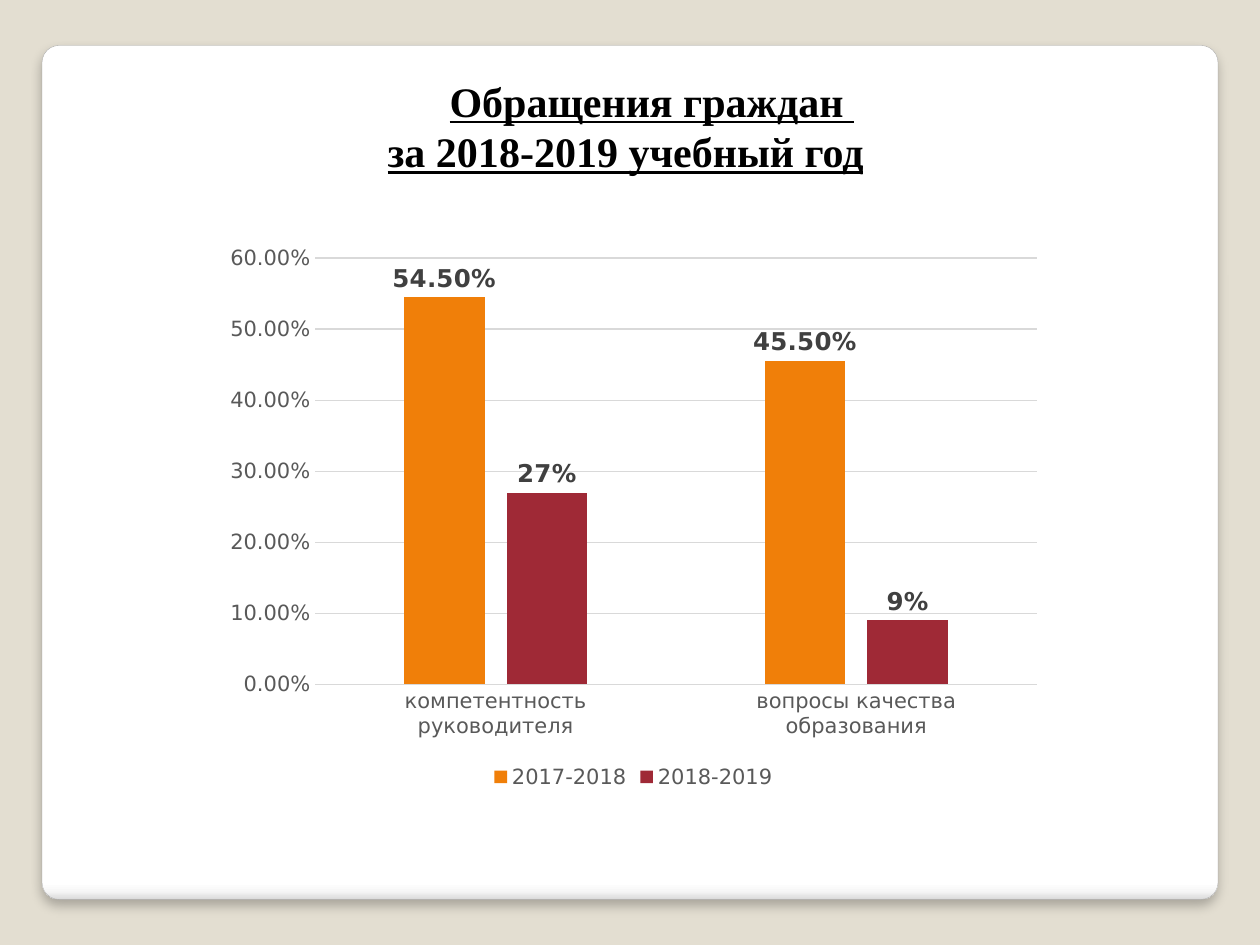
import pptx
import pptx.chart.data
import pptx.dml.color
import pptx.enum.chart
import pptx.enum.shapes
import pptx.enum.text
import pptx.oxml
import pptx.oxml.ns
import pptx.util
from pptx.util import Pt

COLORS = {
    "background": "E3DED1",
    "panel_line": "A4A4A4",
    "title": "000000",
    "axis_text": "595959",
    "grid": "D9D9D9",
    "label": "404040",
}
PANEL_STOPS = [(0, "FFFFFF"), (98, "FFFFFF"), (99, "F7F7F7"), (100, "DADADA")]
CHART_FONT = "DejaVu Sans"
CATEGORIES = ["компетентность руководителя", "вопросы качества образования"]
SERIES = [
    ("2017-2018", [0.545, 0.455], "F07F09", "0.00%"),
    ("2018-2019", [0.27, 0.09], "9F2936", "0%"),
]


def rgb(value):
    return pptx.dml.color.RGBColor.from_string(value)


def set_font(font, name, size, color, bold=False):
    font.name = name
    font.size = Pt(size)
    font.bold = bold
    font.color.rgb = rgb(color)


def set_line(line, color, width):
    line.color.rgb = rgb(color)
    line.width = Pt(width)


def xml(text):
    return pptx.oxml.parse_xml(text.replace(">", f" {pptx.oxml.ns.nsdecls('a')}>", 1))


def add_panel(s):
    """Rounded white panel, shaded at the lower edge, with a soft shadow."""
    sp = s.shapes.add_shape(pptx.enum.shapes.MSO_SHAPE.ROUNDED_RECTANGLE,
                            Pt(24), Pt(26), Pt(672), Pt(488))
    sp.adjustments[0] = 0.02
    set_line(sp.line, COLORS["panel_line"], 0.16)

    sp.fill.gradient()
    sp.fill.gradient_angle = 270
    stops = sp.element.spPr.find(".//" + pptx.oxml.ns.qn("a:gsLst"))
    stops.clear()
    for pos, color in PANEL_STOPS:
        stops.append(xml(f'<a:gs pos="{pos * 1000}"><a:srgbClr val="{color}"/></a:gs>'))

    sp.shadow.inherit = False
    effects = sp.element.spPr.find(pptx.oxml.ns.qn("a:effectLst"))
    effects.append(xml(
        f'<a:outerShdw blurRad="{Pt(6)}" dist="{Pt(4)}" dir="5400000" rotWithShape="0">'
        '<a:srgbClr val="000000"><a:alpha val="25000"/></a:srgbClr></a:outerShdw>'))


def add_title(s):
    tf = s.shapes.add_textbox(Pt(186), Pt(39.5), Pt(343), Pt(65.5)).text_frame
    tf.word_wrap = True
    tf.text = "Обращения граждан \nза 2018-2019 учебный год"
    for p in tf.paragraphs:
        p.alignment = pptx.enum.text.PP_ALIGN.CENTER
        set_font(p.font, "Times New Roman", 24, COLORS["title"], bold=True)
        p.font.underline = True
    tf.paragraphs[0]._p.get_or_add_pPr().set("marL", str(Pt(30)))


def style_axis(axis):
    axis.major_tick_mark = pptx.enum.chart.XL_TICK_MARK.NONE
    axis.minor_tick_mark = pptx.enum.chart.XL_TICK_MARK.NONE
    set_font(axis.tick_labels.font, CHART_FONT, 12, COLORS["axis_text"])


def add_appeals_chart(s):
    data = pptx.chart.data.CategoryChartData()
    data.categories = CATEGORIES
    for name, values, _, fmt in SERIES:
        data.add_series(name, values, fmt)
    chart = s.shapes.add_chart(pptx.enum.chart.XL_CHART_TYPE.COLUMN_CLUSTERED,
                               Pt(122), Pt(134), Pt(480), Pt(320), data).chart
    chart.has_title = False
    chart.font.name = CHART_FONT
    chart.font.size = Pt(10)

    style_axis(chart.category_axis)
    set_line(chart.category_axis.format.line, COLORS["grid"], 0.75)
    values_axis = chart.value_axis
    style_axis(values_axis)
    values_axis.format.line.fill.background()
    set_line(values_axis.major_gridlines.format.line, COLORS["grid"], 0.75)
    values_axis.tick_labels.number_format = "0.00%"
    values_axis.tick_labels.number_format_is_linked = False
    values_axis.minimum_scale, values_axis.maximum_scale = 0, 0.6
    values_axis.major_unit = 0.1

    chart.has_legend = True
    chart.legend.position = pptx.enum.chart.XL_LEGEND_POSITION.BOTTOM
    chart.legend.include_in_layout = False
    set_font(chart.legend.font, CHART_FONT, 12, COLORS["axis_text"])

    plot = chart.plots[0]
    plot.vary_by_categories = False
    plot.gap_width = 219
    plot.overlap = -27
    for series, (_, _, color, fmt) in zip(plot.series, SERIES):
        series.format.fill.solid()
        series.format.fill.fore_color.rgb = rgb(color)
        labels = series.data_labels
        labels.show_value = True
        labels.number_format = fmt
        labels.number_format_is_linked = False
        labels.position = pptx.enum.chart.XL_LABEL_POSITION.OUTSIDE_END
        set_font(labels.font, CHART_FONT, 14, COLORS["label"], bold=True)


def main():
    prs = pptx.Presentation()
    prs.slide_width, prs.slide_height = Pt(720), Pt(540)
    s = prs.slides.add_slide(prs.slide_layouts[6])
    s.background.fill.solid()
    s.background.fill.fore_color.rgb = rgb(COLORS["background"])
    add_panel(s)
    add_title(s)
    add_appeals_chart(s)
    prs.save("out.pptx")


if __name__ == "__main__":
    main()
